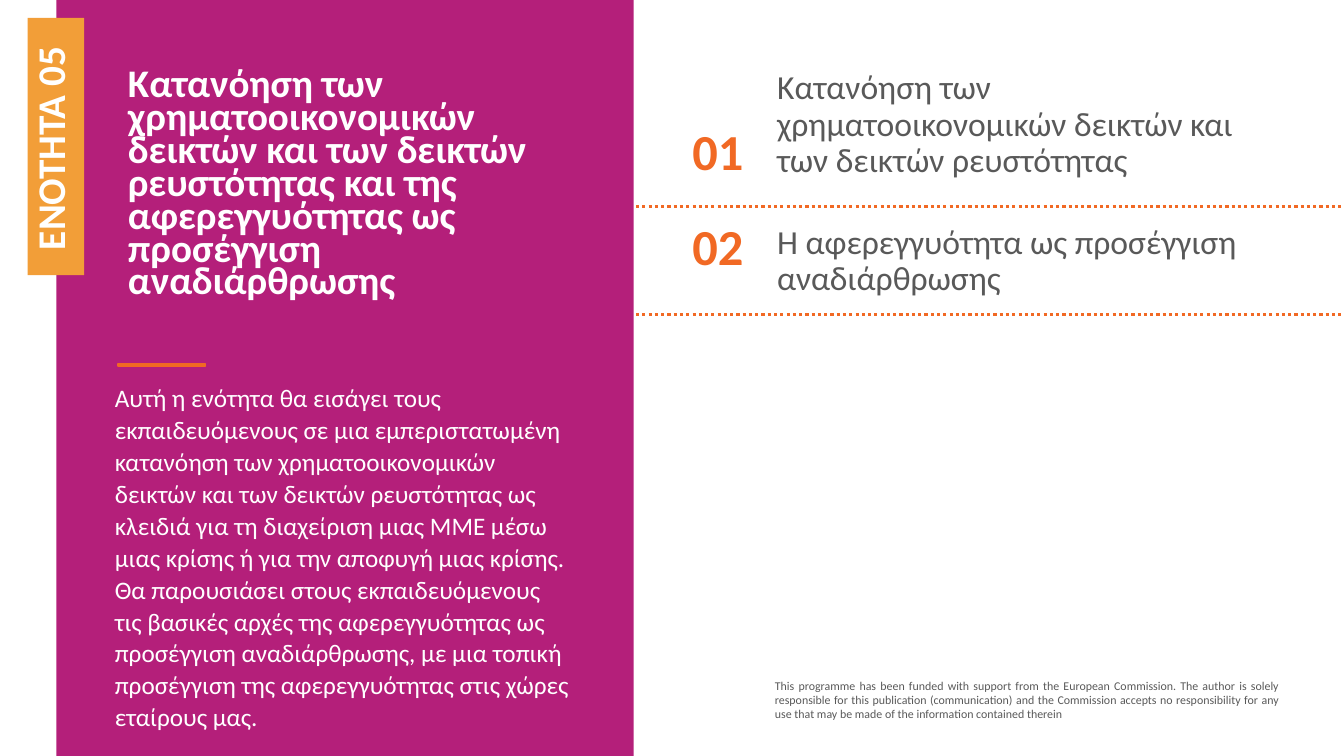
from pptx import Presentation
from pptx.dml.color import RGBColor
from pptx.enum.dml import MSO_LINE_DASH_STYLE as Dash
from pptx.enum.shapes import MSO_CONNECTOR as Connector, MSO_SHAPE as Shape
from pptx.enum.text import MSO_ANCHOR as Anchor, MSO_AUTO_SIZE as AutoSize, PP_ALIGN as Align
from pptx.oxml.ns import qn
from pptx.util import Cm, Pt
from lxml.etree import SubElement

FONT = "Calibri"
MAGENTA, ORANGE, AMBER = "B41F7A", "F16924", "F29E38"
WHITE, GREY = "FFFFFF", "595959"
SLIDE_W, SLIDE_H = 33.87, 19.05

HEADING = ("Κατανόηση των χρηματοοικονομικών δεικτών και των δεικτών ρευστότητας "
           "και της αφερεγγυότητας ως προσέγγιση αναδιάρθρωσης")
SUMMARY = ("Αυτή η ενότητα θα εισάγει τους εκπαιδευόμενους σε μια εμπεριστατωμένη "
           "κατανόηση των χρηματοοικονομικών δεικτών και των δεικτών ρευστότητας ως "
           "κλειδιά για τη διαχείριση μιας ΜΜΕ μέσω μιας κρίσης ή για την αποφυγή μιας "
           "κρίσης. Θα παρουσιάσει στους εκπαιδευόμενους τις βασικές αρχές της "
           "αφερεγγυότητας ως προσέγγιση αναδιάρθρωσης, με μια τοπική προσέγγιση της "
           "αφερεγγυότητας στις χώρες εταίρους μας.")
FUNDING = ("This programme has been funded with support from the European Commission. "
           "The author is solely responsible for this publication (communication) and the "
           "Commission accepts no responsibility for any use that may be made of the "
           "information contained therein")
# Topic, its top and height, top of its number, and the divider below, from the region's top
TOPICS = [
    ("Κατανόηση των χρηματοοικονομικών δεικτών και των δεικτών ρευστότητας",
     2.01, 2.29, 3.02, 5.21),
    ("Η αφερεγγυότητα ως προσέγγιση αναδιάρθρωσης", 5.72, 1.75, 5.41, 7.92),
]


def rgb(hex_code):
    return RGBColor.from_string(hex_code)


def place(shape, left, top, width, height):
    shape.left, shape.top = Cm(left), Cm(top)
    shape.width, shape.height = Cm(width), Cm(height)


def write(shape, text, size, color, bold=False, align=Align.LEFT,
          anchor=Anchor.TOP, spacing=1.0, indent=0):
    frame = shape.text_frame
    frame.word_wrap = True
    frame.auto_size = AutoSize.NONE
    frame.vertical_anchor = anchor
    frame.text = text
    paragraph = frame.paragraphs[0]
    paragraph.alignment = align
    paragraph.line_spacing = spacing
    paragraph.space_before = Pt(0)
    properties = paragraph._p.get_or_add_pPr()
    properties.set("marL", str(Cm(indent)))
    properties.set("indent", "0")
    SubElement(properties, qn("a:buNone"))
    font = paragraph.font
    font.name, font.size, font.bold = FONT, Pt(size), bold
    font.color.rgb = rgb(color)


def add_block(slide, box, color):
    block = slide.shapes.add_shape(Shape.RECTANGLE, *map(Cm, box))
    block.shadow.inherit = False
    block.fill.solid()
    block.fill.fore_color.rgb = rgb(color)
    block.line.fill.background()
    return block


def add_divider(slide, left, right, y):
    divider = slide.shapes.add_connector(Connector.STRAIGHT, Cm(left), Cm(y), Cm(right), Cm(y))
    divider.line.color.rgb = rgb(ORANGE)
    divider.line.width = Pt(2.25)
    divider.line.dash_style = Dash.ROUND_DOT
    SubElement(divider._element.spPr, qn("a:effectLst"))


def unit_panel(slide, box, summary):
    left, top, width, height = box
    # Coloured background, behind the placeholders
    panel = add_block(slide, box, MAGENTA)
    panel._element.getparent().insert(2, panel._element)
    # Unit heading
    heading = slide.shapes.title
    place(heading, left + 1.55, top + 1.68, 11.35, 7.54)
    write(heading, HEADING, 27.9, WHITE, bold=True, spacing=0.7)
    # Short accent rule
    accent = add_block(slide, (left + 1.55, top + 9.17, 2.21, 0.05), ORANGE)
    accent.line.color.rgb = rgb(ORANGE)
    accent.line.width = Pt(1)
    # Unit summary
    place(summary, left + 1.22, top + 9.47, 12.04, 6.88)
    write(summary, SUMMARY, 18, WHITE, spacing=Pt(22.8))


def unit_tab(slide, box):
    left, top, width, height = box
    # Laid out flat around the box's centre, then turned upright
    flat = (left + (width - height) / 2, top + (height - width) / 2, height, width)
    tab = add_block(slide, flat, AMBER)
    tab.rotation = 270
    write(tab, "ΕΝΟΤΗΤΑ 05", 28, WHITE, bold=True, anchor=Anchor.MIDDLE,
          spacing=Pt(24.4), indent=0.38)


def topic_list(slide, box, topic_bodies):
    left, top, width, height = box
    for number, (body, topic) in enumerate(zip(topic_bodies, TOPICS), 1):
        text, text_top, text_height, number_top, divider_y = topic
        # Topic text
        place(body, left + 3.3, top + text_top, 13.21, text_height)
        write(body, text, 24, GREY, anchor=Anchor.MIDDLE, spacing=0.9)
        # Number
        label = slide.shapes.add_textbox(Cm(left + 0.91), Cm(top + number_top), Cm(2.31), Cm(1.75))
        write(label, f"{number:02d}", 36, ORANGE, bold=True, align=Align.CENTER,
              anchor=Anchor.MIDDLE, spacing=0.9)
        # Dotted divider
        add_divider(slide, left, left + width, top + divider_y)


def funding_note(slide, box):
    note = slide.shapes.add_textbox(*map(Cm, box))
    write(note, FUNDING, 8.5, GREY, align=Align.JUSTIFY)


def main():
    deck = Presentation()
    deck.slide_width, deck.slide_height = Cm(SLIDE_W), Cm(SLIDE_H)
    slide = deck.slides.add_slide(deck.slide_layouts.get_by_name("Comparison"))
    summary, first_topic, second_topic, spare = list(slide.placeholders)[1:]
    spare._element.getparent().remove(spare._element)

    unit_panel(slide, (1.42, 0, 14.55, SLIDE_H), summary)
    unit_tab(slide, (0.7, 0.45, 1.42, 6.48))
    topic_list(slide, (16.03, 0, SLIDE_W - 16.03, 8), (first_topic, second_topic))
    funding_note(slide, (19.28, 16.97, 13.21, 1.35))
    deck.save("out.pptx")


if __name__ == "__main__":
    main()
